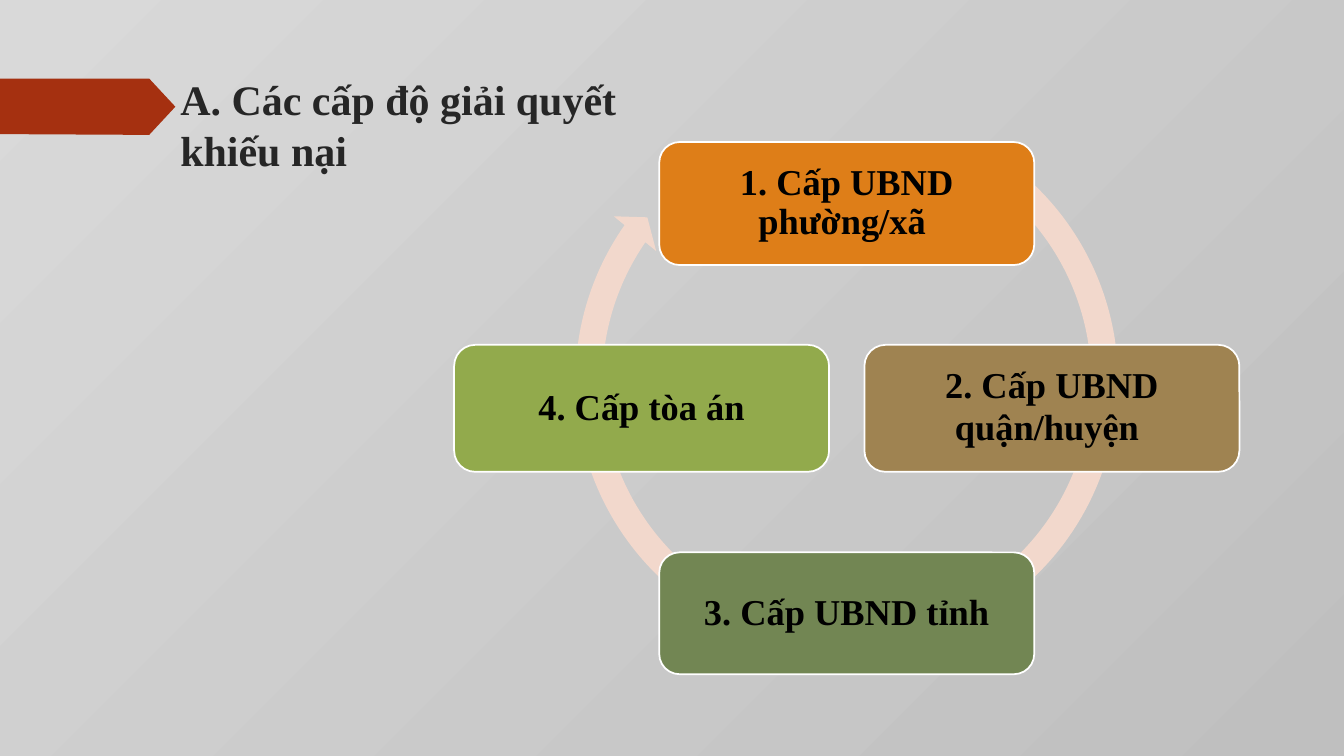
from pptx import Presentation
from pptx import oxml
from pptx.dml.color import RGBColor
from pptx.enum import shapes, text
from pptx.oxml import ns
from pptx.util import Cm, Pt

COLORS = {
    "backdrop_dark": "BFBFBF",
    "backdrop_light": "D9D9D9",
    "flag": "A53010",
    "title": "262626",
    "ring": "F2D8CC",
    "ward": "DE7E18",
    "district": "9F8351",
    "province": "728653",
    "court": "92AA4C",
    "outline": "FFFFFF",
    "label": "000000",
}
SERIF = "Times New Roman"
LEVEL_WIDTH = 9.45
CENTER_X = 21.34
SIDE_OFFSET = 5.17

# label, colour, horizontal centre, top, height
LEVELS = [
    ("1. Cấp UBND phường/xã ", "ward", CENTER_X, 3.58, 3.1),
    ("2. Cấp UBND quận/huyện", "district", CENTER_X + SIDE_OFFSET, 8.69, 3.2),
    ("3. Cấp UBND tỉnh", "province", CENTER_X, 13.92, 3.07),
    ("4. Cấp tòa án", "court", CENTER_X - SIDE_OFFSET, 8.69, 3.2),
]


def rgb(name):
    return RGBColor.from_string(COLORS[name])


def paint(shape, fill, outline=None):
    shape.shadow.inherit = False
    shape.fill.solid()
    shape.fill.fore_color.rgb = rgb(fill)
    if outline:
        shape.line.color.rgb = rgb(outline)
        shape.line.width = Pt(1.25)
    else:
        shape.line.fill.background()


def add_text(paragraph, words, size=26, font=SERIF, color="label", bold=True):
    run = paragraph.add_run()
    run.text = words
    run.font.size = Pt(size)
    run.font.name = font
    run.font.bold = bold
    run.font.color.rgb = rgb(color)


def set_backdrop(slide):
    """Give the slide a gradient that spreads from its lower right corner."""
    backdrop = oxml.parse_xml(
        f'<p:bg {ns.nsdecls("p", "a")}><p:bgPr><a:gradFill><a:gsLst>'
        f'<a:gs pos="0"><a:srgbClr val="{COLORS["backdrop_dark"]}"/></a:gs>'
        f'<a:gs pos="100000"><a:srgbClr val="{COLORS["backdrop_light"]}">'
        '<a:alpha val="50000"/></a:srgbClr></a:gs></a:gsLst>'
        '<a:path path="circle"><a:fillToRect l="100000" t="100000"/></a:path>'
        '<a:tileRect r="-100000" b="-100000"/>'
        '</a:gradFill><a:effectLst/></p:bgPr></p:bg>'
    )
    slide.element.cSld.insert(0, backdrop)


def add_flag(slide):
    outline = [(3.76, 1.98), (4.42, 2.69), (3.76, 3.4), (0, 3.38)]
    builder = slide.shapes.build_freeform(Cm(0), Cm(1.98))
    builder.add_line_segments([(Cm(x), Cm(y)) for x, y in outline])
    paint(builder.convert_to_shape(), "flag")


def set_title(slide, words):
    title = slide.shapes.title
    title.left, title.top = Cm(4.29), Cm(1.73)
    title.width, title.height = Cm(12.34), Cm(3.56)
    frame = title.text_frame
    frame.word_wrap = True
    frame.auto_size = text.MSO_AUTO_SIZE.NONE
    frame.vertical_anchor = text.MSO_ANCHOR.TOP
    paragraph = frame.paragraphs[0]
    paragraph.alignment = text.PP_ALIGN.LEFT
    add_text(paragraph, words, size=30, color="title")


def add_ring(slide):
    ring = slide.shapes.add_shape(
        shapes.MSO_SHAPE.CIRCULAR_ARROW, Cm(14.15), Cm(2.41), Cm(14.38), Cm(14.38)
    )
    for i, value in enumerate([0.047, 2.729, 128.887, 179.919, 0.048]):
        ring.adjustments[i] = value
    paint(ring, "ring")


def add_level(slide, label, color, center, top, height):
    level = slide.shapes.add_shape(
        shapes.MSO_SHAPE.ROUNDED_RECTANGLE,
        Cm(center - LEVEL_WIDTH / 2), Cm(top), Cm(LEVEL_WIDTH), Cm(height),
    )
    paint(level, color, "outline")
    frame = level.text_frame
    frame.word_wrap = True
    frame.vertical_anchor = text.MSO_ANCHOR.MIDDLE
    frame.margin_left = frame.margin_right = Cm(0.43)
    frame.margin_top = frame.margin_bottom = Cm(0.43)
    paragraph = frame.paragraphs[0]
    paragraph.alignment = text.PP_ALIGN.CENTER
    paragraph.line_spacing = 0.9
    add_text(paragraph, label)
    return paragraph


def main():
    deck = Presentation()
    deck.slide_width, deck.slide_height = Cm(33.87), Cm(19.05)
    slide = deck.slides.add_slide(deck.slide_layouts[5])
    set_backdrop(slide)
    add_flag(slide)
    set_title(slide, "A. Các cấp độ giải quyết khiếu nại")
    add_ring(slide)
    labels = [add_level(slide, *level) for level in LEVELS]
    add_text(labels[1], " ", size=28, font="League Spartan",
             color="outline", bold=False)
    deck.save("out.pptx")


if __name__ == "__main__":
    main()
